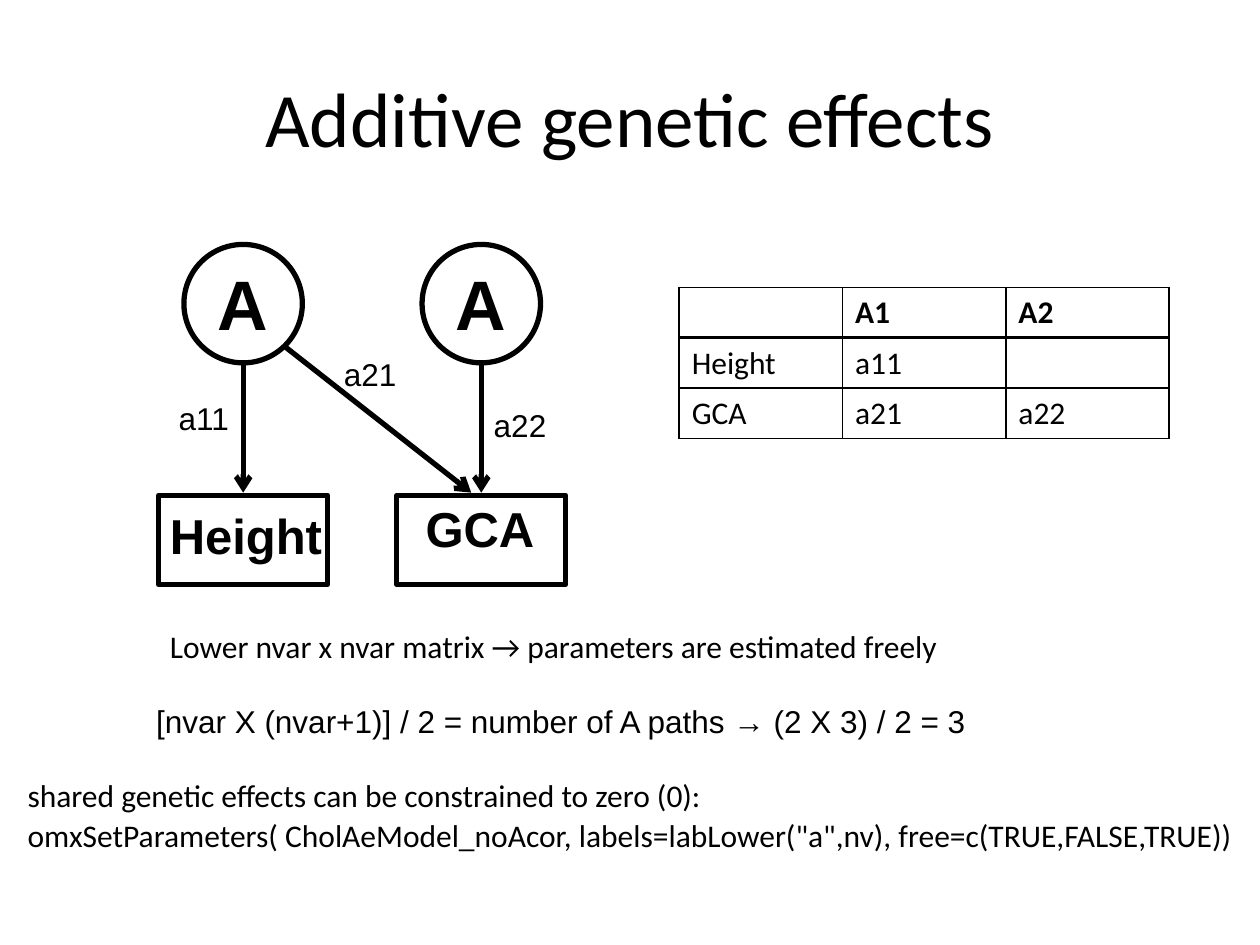
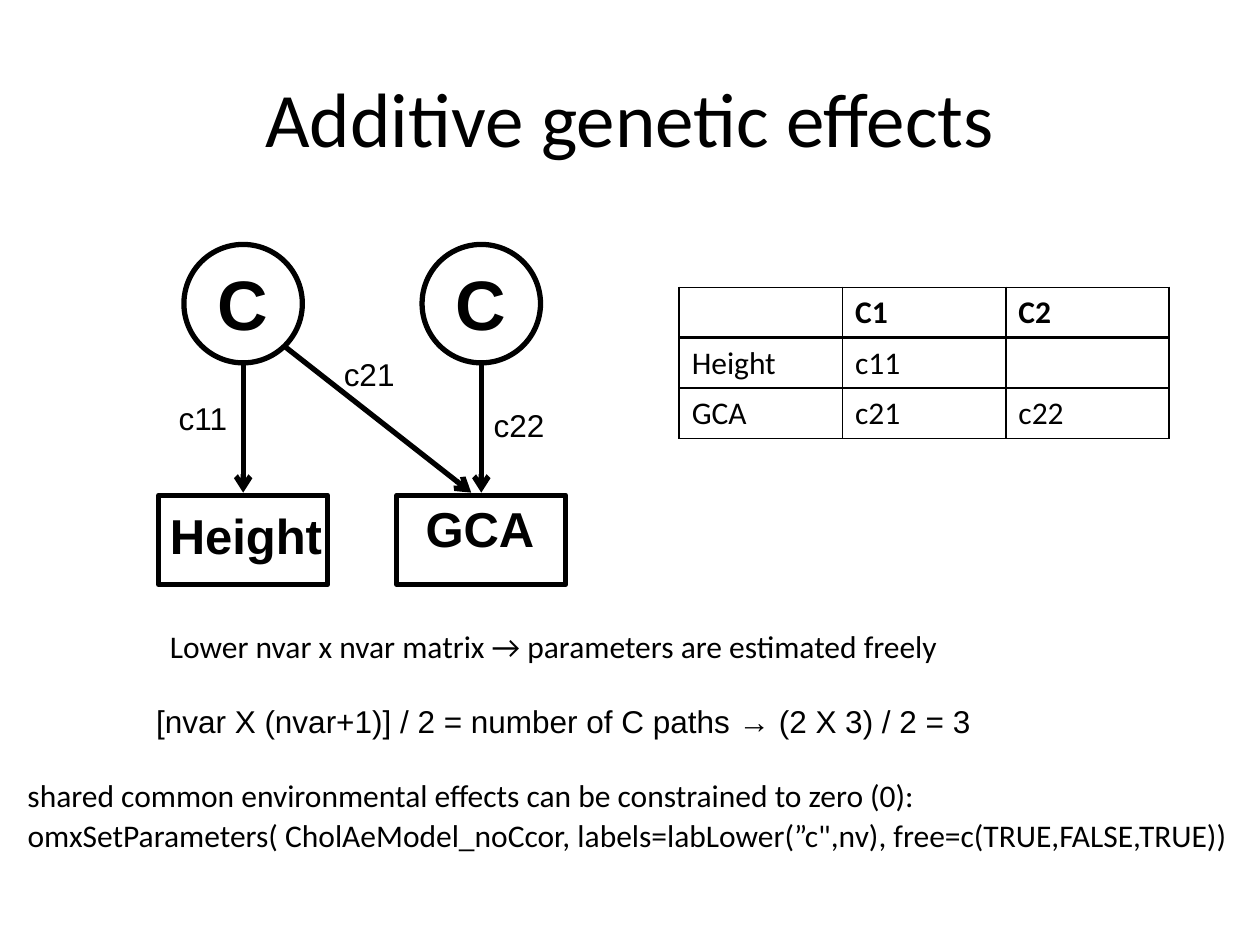
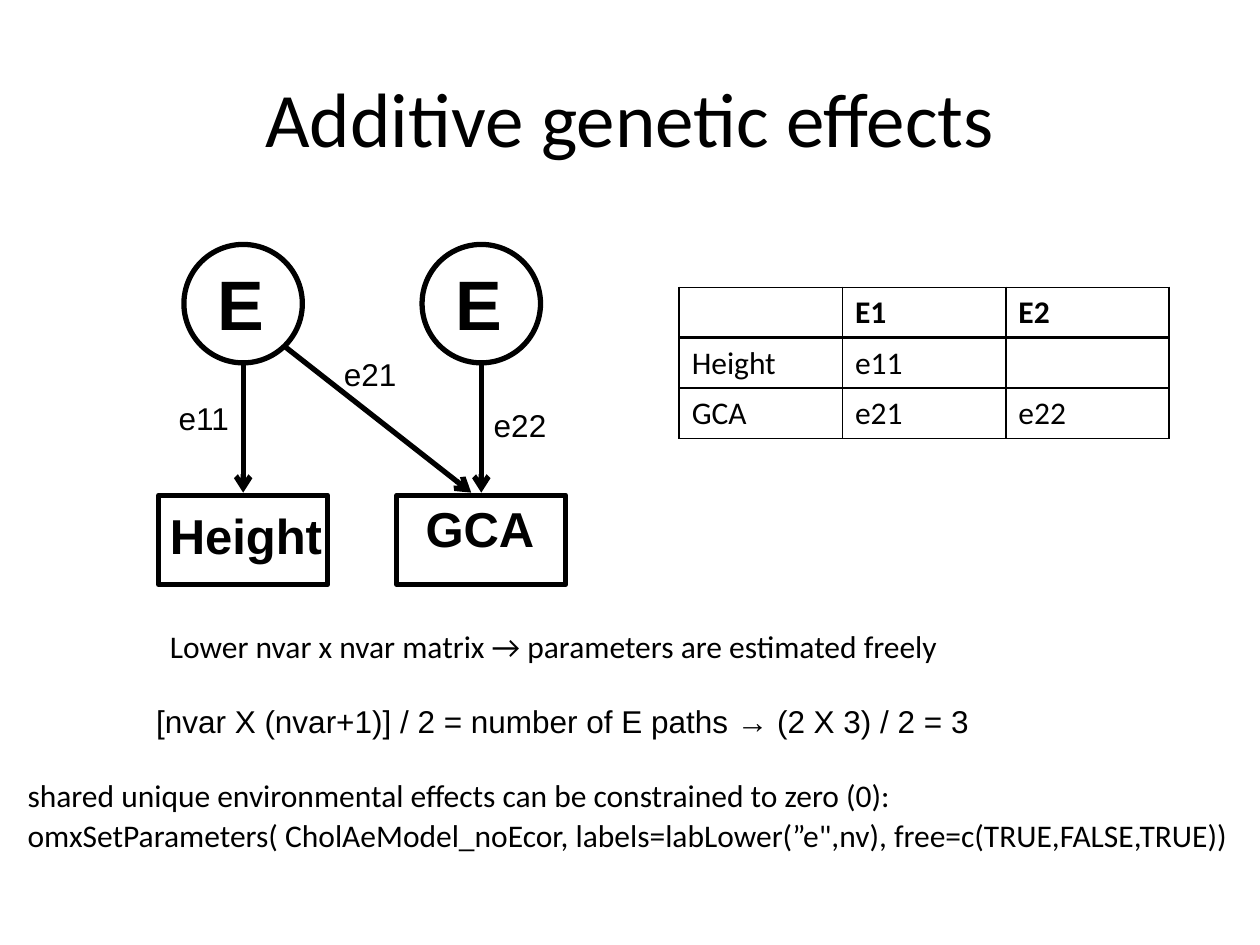
from dataclasses import dataclass
from typing import Any, NamedTuple

from lxml import etree
from pptx import Presentation
from pptx.dml.color import RGBColor
from pptx.enum.shapes import MSO_CONNECTOR, MSO_SHAPE
from pptx.enum.text import MSO_ANCHOR, MSO_AUTO_SIZE, PP_ALIGN
from pptx.oxml.ns import qn
from pptx.util import Inches, Pt

ELLIPSE, RECTANGLE = MSO_SHAPE.OVAL, MSO_SHAPE.RECTANGLE
STRAIGHT = MSO_CONNECTOR.STRAIGHT
CENTER, MIDDLE = PP_ALIGN.CENTER, MSO_ANCHOR.MIDDLE
GROW = MSO_AUTO_SIZE.SHAPE_TO_FIT_TEXT

SLIDE_WIDTH, SLIDE_HEIGHT = Inches(10), Inches(7.5)
COLUMN, ROW = SLIDE_WIDTH / 100, SLIDE_HEIGHT / 75
INK = "000000"
STROKE = 3

TITLE_FONT = {"name": "Calibri", "size": Pt(44), "bold": False}
FACTOR_FONT = {"name": "Arial", "size": Pt(40), "bold": True}
TRAIT_FONT = {"name": "Arial", "size": Pt(28), "bold": True}
PATH_FONT = {"name": "Arial", "size": Pt(18), "bold": False}
BODY_FONT = {"name": "Calibri", "size": Pt(18), "bold": False}
HEADER_FONT = BODY_FONT | {"bold": True}


class Area(NamedTuple):
    column: float
    row: float
    columns: float
    rows: float

    def lengths(self) -> tuple[int, ...]:
        units = (COLUMN, ROW, COLUMN, ROW)
        return tuple(round(value * unit) for value, unit in zip(self, units))

    def shifted(self, columns: float) -> "Area":
        return self._replace(column=self.column + columns)


class Arrow(NamedTuple):
    start_column: float
    start_row: float
    end_column: float
    end_row: float


class Label(NamedTuple):
    text: str
    area: Area
    font: dict[str, Any]
    wrap: bool = False


@dataclass
class Component:
    letter: str
    letter_columns: float
    effects: str
    effects_columns: float
    opening_quote: str


COMPONENTS = [
    Component("A", 6.1, "genetic", 70.9, '"'),
    Component("C", 6.1, "common environmental", 80.3, "”"),
    Component("E", 5.8, "unique environmental", 70.9, "”"),
]

TITLE_AREA = Area(5, 3, 90, 12.5)
FACTOR_AREA = Area(14.6, 19.4, 9.4, 9.4)
TRAIT_AREA = Area(12.6, 39.3, 13.4, 7.1)
TABLE_AREA = Area(53.9, 22.8, 38.9, 12)
FACTOR_PITCH = 18.9
ARROWS = [
    Arrow(19.3, 28.8, 19.3, 39.1),
    Arrow(22.6, 27.5, 37.4, 39.1),
    Arrow(38.2, 28.8, 38.2, 39.1),
]


def paint(color_format: Any, color: str) -> None:
    color_format.rgb = RGBColor.from_string(color)


def apply_format(target: Any, values: dict[str, Any]) -> None:
    for attribute, value in values.items():
        setattr(target, attribute, value)


def write(frame: Any, text: str, font: dict[str, Any]) -> None:
    frame.text = text
    text_font = frame.paragraphs[0].font
    apply_format(text_font, font)
    paint(text_font.color, INK)


def draw_line(line: Any) -> None:
    paint(line.color, INK)
    line.width = Pt(STROKE)


def add_outline(slide: Any, kind: Any, area: Area) -> None:
    outline = slide.shapes.add_shape(kind, *area.lengths())
    outline.shadow.inherit = False
    outline.fill.background()
    draw_line(outline.line)


def add_label(slide: Any, label: Label) -> None:
    frame = slide.shapes.add_textbox(*label.area.lengths()).text_frame
    apply_format(frame, {"word_wrap": label.wrap, "auto_size": GROW})
    write(frame, label.text, label.font)


def add_arrow(slide: Any, arrow: Arrow) -> None:
    connector = slide.shapes.add_connector(STRAIGHT, *Area(*arrow).lengths())
    draw_line(connector.line)
    etree.SubElement(connector.line._ln, qn("a:tailEnd"), type="arrow")
    etree.SubElement(connector._element.spPr, qn("a:effectLst"))


def add_border(cell: Any, side: str, width: float) -> None:
    properties = cell._tc.get_or_add_tcPr()
    border = etree.SubElement(properties, qn(f"a:ln{side}"), w=str(Pt(width)))
    fill = etree.SubElement(border, qn("a:solidFill"))
    etree.SubElement(fill, qn("a:srgbClr"), val=INK)


def add_matrix(slide: Any, letter: str) -> None:
    path = letter.lower()
    rows = [
        ["", f"{letter}1", f"{letter}2"],
        ["Height", f"{path}11", ""],
        ["GCA", f"{path}21", f"{path}22"],
    ]
    table = slide.shapes.add_table(3, 3, *TABLE_AREA.lengths()).table
    apply_format(table, {"first_row": False, "horz_banding": False})
    for row, texts in enumerate(rows):
        for column, text in enumerate(texts):
            cell = table.cell(row, column)
            write(cell.text_frame, text, BODY_FONT if row else HEADER_FONT)
            widths = {"L": 1, "R": 1, "T": 2 if row == 1 else 1, "B": 1 if row else 2}
            for side, width in widths.items():
                add_border(cell, side, width)
            cell.fill.background()


def add_title(slide: Any, text: str) -> None:
    title = slide.shapes.title
    places = ("left", "top", "width", "height")
    apply_format(title, dict(zip(places, TITLE_AREA.lengths())))
    write(title.text_frame, text, TITLE_FONT)
    title.text_frame.vertical_anchor = MIDDLE
    title.text_frame.paragraphs[0].alignment = CENTER


def path_diagram_labels(component: Component) -> list[Label]:
    letter, path = component.letter, component.letter.lower()
    factor = Area(16.3, 20.2, component.letter_columns, 7.7)
    return [
        Label(letter, factor, FACTOR_FONT),
        Label(letter, factor.shifted(FACTOR_PITCH), FACTOR_FONT),
        Label("Height", Area(12.5, 39.6, 14.3, 5.7), TRAIT_FONT),
        Label("GCA", Area(32.8, 39.1, 10.7, 5.7), TRAIT_FONT),
        Label(f"{path}11", Area(13.2, 31.2, 6, 4), PATH_FONT),
        Label(f"{path}21", Area(26.3, 27.7, 6.2, 4), PATH_FONT),
        Label(f"{path}22", Area(38.2, 31.7, 6.2, 4), PATH_FONT),
    ]


def explanation_labels(component: Component) -> list[Label]:
    letter = component.letter
    code = (
        f"omxSetParameters( CholAeModel_no{letter}cor, "
        f'labels=labLower({component.opening_quote}{letter.lower()}",nv), '
        "free=c(TRUE,FALSE,TRUE))"
    )
    matrix = "Lower nvar x nvar matrix → parameters are estimated freely"
    constraint = f"shared {component.effects} effects can be constrained to zero (0):"
    count = f"[nvar X (nvar+1)] / 2 = number of {letter} paths → (2 X 3) / 2 = 3"
    return [
        Label(code, Area(1.2, 64.3, 98.8, 4), BODY_FONT, True),
        Label(matrix, Area(12.5, 49.3, 70.9, 4), BODY_FONT, True),
        Label(constraint, Area(1.2, 61.1, component.effects_columns, 4), BODY_FONT, True),
        Label(count, Area(11.4, 55.2, 66.8, 4), PATH_FONT),
    ]


def build_slide(deck: Any, component: Component) -> None:
    slide = deck.slides.add_slide(deck.slide_layouts.get_by_name("Title Only"))
    add_title(slide, "Additive genetic effects")
    for kind, area in ((ELLIPSE, FACTOR_AREA), (RECTANGLE, TRAIT_AREA)):
        for index in range(2):
            add_outline(slide, kind, area.shifted(index * FACTOR_PITCH))
    for arrow in ARROWS:
        add_arrow(slide, arrow)
    for label in path_diagram_labels(component):
        add_label(slide, label)
    add_matrix(slide, component.letter)
    for label in explanation_labels(component):
        add_label(slide, label)


def main() -> None:
    deck = Presentation()
    apply_format(deck, {"slide_width": SLIDE_WIDTH, "slide_height": SLIDE_HEIGHT})
    for component in COMPONENTS:
        build_slide(deck, component)
    deck.save("out.pptx")


if __name__ == "__main__":
    main()
